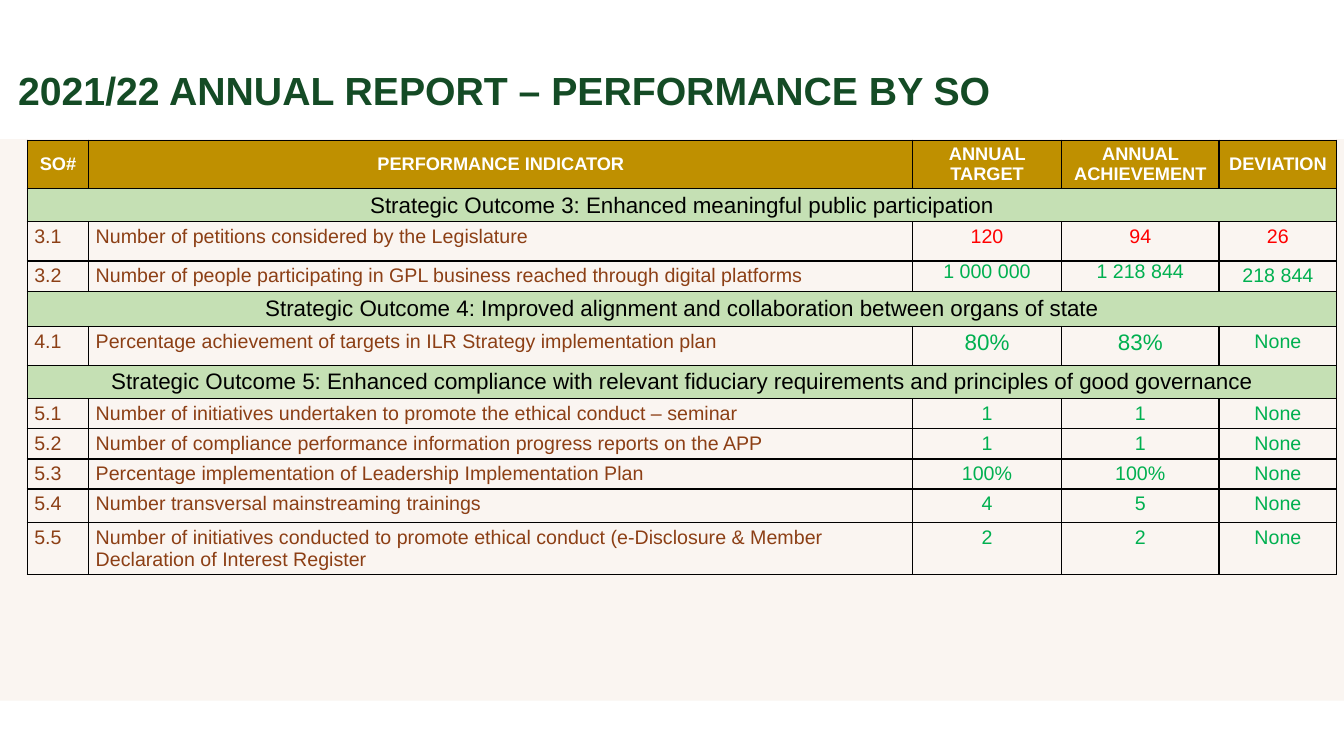
from lxml import etree
from pptx import Presentation
from pptx.dml.color import RGBColor
from pptx.enum.shapes import MSO_SHAPE
from pptx.enum.text import MSO_ANCHOR, PP_ALIGN
from pptx.oxml.ns import qn
from pptx.util import Inches, Pt

RECTANGLE = MSO_SHAPE.RECTANGLE
MIDDLE, TOP = MSO_ANCHOR.MIDDLE, MSO_ANCHOR.TOP
LEFT, CENTER = PP_ALIGN.LEFT, PP_ALIGN.CENTER

SLIDE_WIDTH, SLIDE_HEIGHT = Inches(13.33), Inches(7.5)
FONT = "Arial"
COLORS = {
    "title": "144B25", "band": "FAF5F1", "header": "BF9000", "outcome": "C5E0B4",
    "white": "FFFFFF", "black": "000000", "indicator": "8C3F15",
    "missed": "FF0000", "met": "00B050",
}

COLUMN_WIDTHS = [0.61, 8.17, 1.48, 1.56, 1.17]
ROW_HEIGHTS = [0.48, 0.32, 0.39, 0.29, 0.35, 0.39, 0.32, 0.3, 0.29, 0.29, 0.33, 0.51]

# A row with a single entry is a strategic outcome heading
ROWS = [
    ["SO#", "PERFORMANCE INDICATOR", "ANNUAL TARGET", "ANNUAL ACHIEVEMENT", "DEVIATION"],
    ["Strategic Outcome 3: Enhanced meaningful public participation"],
    ["3.1", "Number of petitions considered by the Legislature", "120", "94", "26"],
    ["3.2", "Number of people participating in GPL business reached through digital platforms",
     "1 000 000", "1 218 844", "218 844"],
    ["Strategic Outcome 4: Improved alignment and collaboration between organs of state"],
    ["4.1", "Percentage achievement of targets in ILR Strategy implementation plan",
     "80%", "83%", "None"],
    ["Strategic Outcome 5: Enhanced compliance with relevant fiduciary requirements "
     "and principles of good governance"],
    ["5.1", "Number of initiatives undertaken to promote the ethical conduct – seminar",
     "1", "1", "None"],
    ["5.2", "Number of compliance performance information progress reports on the APP",
     "1", "1", "None"],
    ["5.3", "Percentage implementation of Leadership Implementation Plan",
     "100%", "100%", "None"],
    ["5.4", "Number transversal mainstreaming trainings", "4", "5", "None"],
    ["5.5", "Number of initiatives conducted to promote ethical conduct "
     "(e-Disclosure & Member Declaration of Interest Register", "2", "2", "None"],
]


def rgb(name):
    return RGBColor.from_string(COLORS[name])


def place(shape, left, top, width, height):
    """Position a shape by shares of the slide's size."""
    shape.left, shape.width = int(SLIDE_WIDTH * left), int(SLIDE_WIDTH * width)
    shape.top, shape.height = int(SLIDE_HEIGHT * top), int(SLIDE_HEIGHT * height)


def format_paragraph(paragraph, size, color, align=LEFT, bold=False):
    paragraph.alignment = align
    for run in paragraph.runs:
        run.font.name = FONT
        run.font.size = Pt(size)
        run.font.bold = bold
        run.font.color.rgb = rgb(color)


def add_band(slide):
    band = slide.shapes.add_shape(RECTANGLE, 0, 0, 0, 0)
    place(band, 0, 0.184, 1, 0.743)
    band.shadow.inherit = False
    band.fill.solid()
    band.fill.fore_color.rgb = rgb("band")
    band.line.fill.background()


def set_title(slide, text):
    title = slide.shapes.title
    place(title, 0.006, 0.06, 0.994, 0.125)
    title.text_frame.text = text
    title.text_frame.word_wrap = True
    title.text_frame.vertical_anchor = MIDDLE
    paragraph = title.text_frame.paragraphs[0]
    paragraph.line_spacing = 0.9
    format_paragraph(paragraph, 28, "title", bold=True)


def set_borders(cell):
    properties = cell._tc.get_or_add_tcPr()
    for side in ("a:lnL", "a:lnR", "a:lnT", "a:lnB"):
        line = etree.SubElement(properties, qn(side), w=str(Pt(1)))
        fill = etree.SubElement(line, qn("a:solidFill"))
        etree.SubElement(fill, qn("a:srgbClr"), val=COLORS["black"])


def format_cell(cell, text, size, color, align=CENTER, bold=False,
                fill=None, anchor=TOP, inset=0.04):
    cell.text_frame.text = text
    cell.vertical_anchor = anchor
    cell.margin_left = cell.margin_right = Inches(0.07)
    cell.margin_top = cell.margin_bottom = Inches(inset)
    if fill:
        cell.fill.solid()
        cell.fill.fore_color.rgb = rgb(fill)
    else:
        cell.fill.background()
    format_paragraph(cell.text_frame.paragraphs[0], size, color, align, bold)


def fill_indicator_row(cells, entries):
    number = entries[0]
    result_color = "missed" if number == "3.1" else "met"
    for column, (cell, text) in enumerate(zip(cells, entries)):
        if column < 2:
            format_cell(cell, text, 14, "indicator", LEFT)
        else:
            size = 16 if text in ("80%", "83%") else 14
            inset = 0 if number == "3.2" else 0.04
            format_cell(cell, text, size, result_color, inset=inset)
    if number == "3.2":
        cells[-1].text_frame.paragraphs[0].line_spacing = 1.15


def add_performance_table(slide):
    frame = slide.shapes.add_table(
        len(ROWS), len(COLUMN_WIDTHS), Inches(0.27), Inches(1.39),
        Inches(sum(COLUMN_WIDTHS)), Inches(sum(ROW_HEIGHTS)))
    table = frame.table
    table.first_row = table.horz_banding = False
    for column, width in zip(table.columns, COLUMN_WIDTHS):
        column.width = Inches(width)
    for index, (row, height, entries) in enumerate(zip(table.rows, ROW_HEIGHTS, ROWS)):
        row.height = Inches(height)
        cells = list(row.cells)
        for cell in cells:
            set_borders(cell)
        if index == 0:
            for cell, text in zip(cells, entries):
                format_cell(cell, text, 13, "white", bold=True, fill="header", anchor=MIDDLE)
        elif len(entries) == 1:
            cells[0].merge(cells[-1])
            format_cell(cells[0], entries[0], 16, "black", fill="outcome", anchor=MIDDLE)
        else:
            fill_indicator_row(cells, entries)


def main():
    presentation = Presentation()
    presentation.slide_width, presentation.slide_height = SLIDE_WIDTH, SLIDE_HEIGHT
    slide = presentation.slides.add_slide(presentation.slide_layouts[5])
    # Background band, title and table
    add_band(slide)
    set_title(slide, "2021/22 ANNUAL REPORT – PERFORMANCE BY SO")
    add_performance_table(slide)
    presentation.save("out.pptx")


if __name__ == "__main__":
    main()
